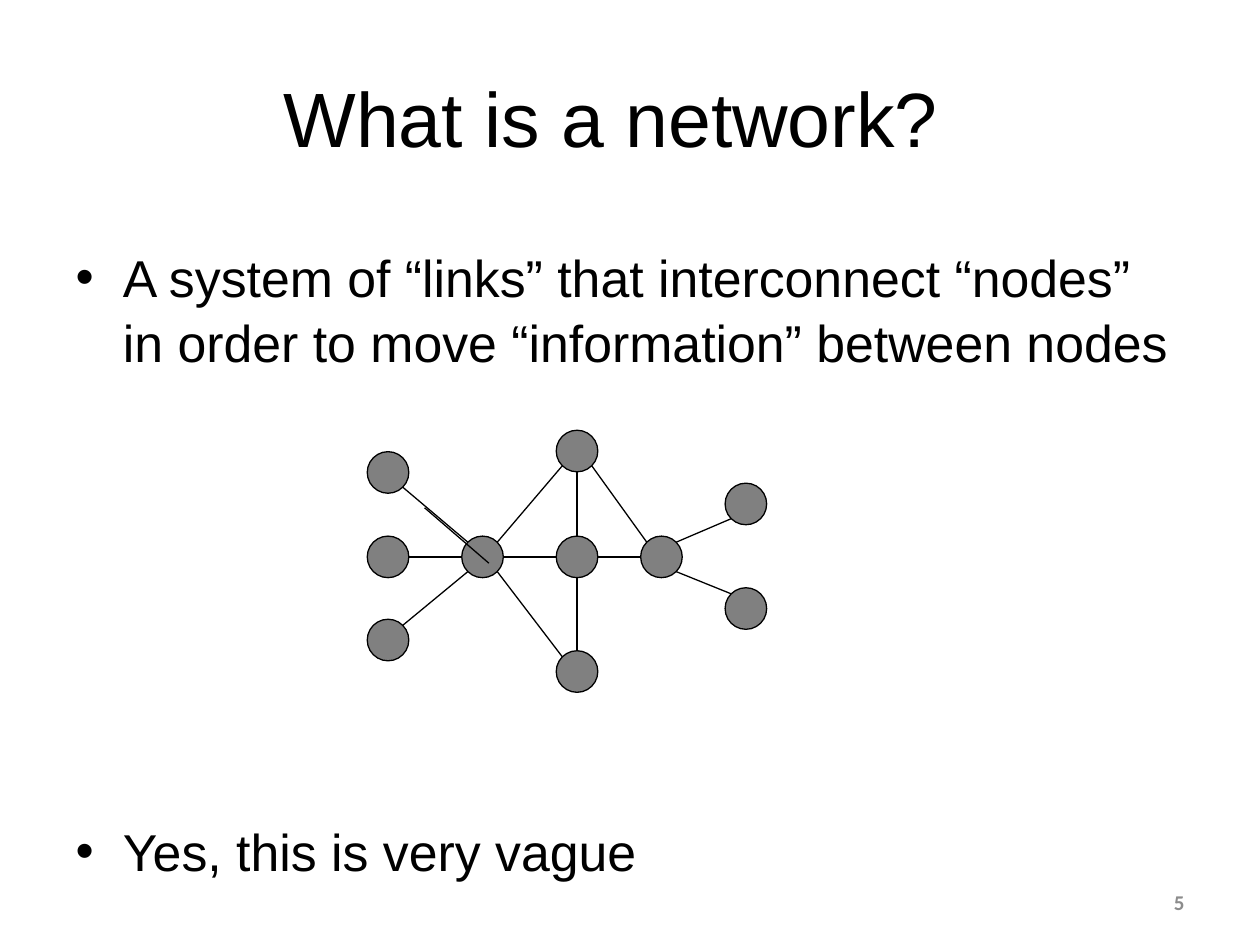
from math import cos, pi, sin

from lxml import etree
from pptx import Presentation
from pptx.dml.color import RGBColor
from pptx.enum.shapes import MSO_CONNECTOR, MSO_SHAPE
from pptx.enum.text import MSO_ANCHOR, MSO_AUTO_SIZE, PP_ALIGN
from pptx.oxml.ns import qn
from pptx.util import Inches, Pt

STRAIGHT = MSO_CONNECTOR.STRAIGHT
OVAL = MSO_SHAPE.OVAL
MIDDLE, TOP = MSO_ANCHOR.MIDDLE, MSO_ANCHOR.TOP
LEFT, CENTER, RIGHT = PP_ALIGN.LEFT, PP_ALIGN.CENTER, PP_ALIGN.RIGHT
NO_FIT = MSO_AUTO_SIZE.NONE

# Content
TITLE = "What is a network?\t"
BULLETS = [  # text, points of space before
    ("A system of “links” that interconnect “nodes” in order to move “information” between nodes", 3),
    ("Yes, this is very vague", 254),
]
PAGE_NUMBER = "5"

NODE_SIZE = 0.33
NODES = {  # centre of each node
    "top": (4.58, 3.58),
    "hub": (3.83, 4.42),
    "bottom": (4.58, 5.33),
    "middle": (4.58, 4.42),
    "gateway": (5.25, 4.42),
    "lower right": (5.92, 4.83),
    "upper right": (5.92, 4.0),
    "upper left": (3.08, 3.75),
    "left": (3.08, 4.42),
    "lower left": (3.08, 5.08),
}
# Compass points on a node's rim, in eighths of a turn clockwise from east
RIM = {point: i for i, point in enumerate(["E", "SE", "S", "SW", "W", "NW", "N", "NE"])}
LINKS = [
    ("upper left", "SE", "hub", "NW"),
    ("left", "E", "hub", "W"),
    ("lower left", "NE", "hub", "SW"),
    ("bottom", "N", "middle", "S"),
    ("middle", "N", "top", "S"),
    ("hub", "E", "middle", "W"),
    ("gateway", "W", "middle", "E"),
    ("gateway", "NE", "upper right", "SW"),
    ("gateway", "SE", "lower right", "NW"),
    ("hub", "NE", "top", "SW"),
    ("hub", "SE", "bottom", "NW"),
    ("top", "SE", "gateway", "NW"),
]
LOOSE_LINK = ((3.37, 4.03), (3.88, 4.47))

THEME = {
    "font": "Arial", "number_font": "Calibri",
    "title": Pt(44), "body": Pt(29.6), "number": Pt(12), "line": Pt(0.75),
    "ink": RGBColor(0x00, 0x00, 0x00),
    "node": RGBColor(0x80, 0x80, 0x80),
    "muted": RGBColor(0x8C, 0x8C, 0x8C),
}


def place(box, left, top, width, height, anchor):
    box.left, box.top = Inches(left), Inches(top)
    box.width, box.height = Inches(width), Inches(height)
    frame = box.text_frame
    frame.word_wrap = True
    frame.auto_size = NO_FIT
    frame.vertical_anchor = anchor
    return frame


def style(paragraph, size, align, face=THEME["font"], color=THEME["ink"], bold=False):
    paragraph.alignment = align
    font = paragraph.font
    font.name, font.size, font.bold = face, size, bold
    font.color.rgb = color


def rim_point(node, point):
    x, y = NODES[node]
    angle = RIM[point] * pi / 4
    return x + NODE_SIZE / 2 * cos(angle), y + NODE_SIZE / 2 * sin(angle)


def add_link(shapes, start, end):
    link = shapes.add_connector(STRAIGHT, *map(Inches, start + end))
    link.line.color.rgb = THEME["ink"]
    link.line.width = THEME["line"]
    etree.SubElement(link._element.spPr, qn("a:effectLst"))


def main():
    deck = Presentation()
    deck.slide_width, deck.slide_height = Inches(10), Inches(7.5)
    slide = deck.slides.add_slide(deck.slide_layouts[1])
    shapes = slide.shapes

    # Title
    title = place(shapes.title, 0.5, 0.3, 9, 1.25, MIDDLE)
    title.text = TITLE
    style(title.paragraphs[0], THEME["title"], CENTER)

    # Bullets above and below the diagram
    body = place(slide.placeholders[1], 0.5, 1.88, 9, 5.29, TOP)
    body.text = "\n".join(text for text, _ in BULLETS)
    for paragraph, (_, gap) in zip(body.paragraphs, BULLETS):
        style(paragraph, THEME["body"], LEFT)
        paragraph.space_before = Pt(gap)
        paragraph.line_spacing = 1.04

    # Network nodes
    for x, y in NODES.values():
        corner = Inches(x - NODE_SIZE / 2), Inches(y - NODE_SIZE / 2)
        node = shapes.add_shape(OVAL, *corner, Inches(NODE_SIZE), Inches(NODE_SIZE))
        node.shadow.inherit = False
        node.fill.solid()
        node.fill.fore_color.rgb = THEME["node"]
        node.line.color.rgb = THEME["ink"]
        node.line.width = THEME["line"]

    # Network links
    for start, start_point, end, end_point in LINKS:
        add_link(shapes, rim_point(start, start_point), rim_point(end, end_point))
    add_link(shapes, *LOOSE_LINK)

    # Page number
    number = place(shapes.add_textbox(0, 0, 0, 0), 7.17, 6.96, 2.33, 0.4, MIDDLE)
    number.text = PAGE_NUMBER
    style(number.paragraphs[0], THEME["number"], RIGHT,
          THEME["number_font"], THEME["muted"], bold=True)

    deck.save("out.pptx")


if __name__ == "__main__":
    main()
